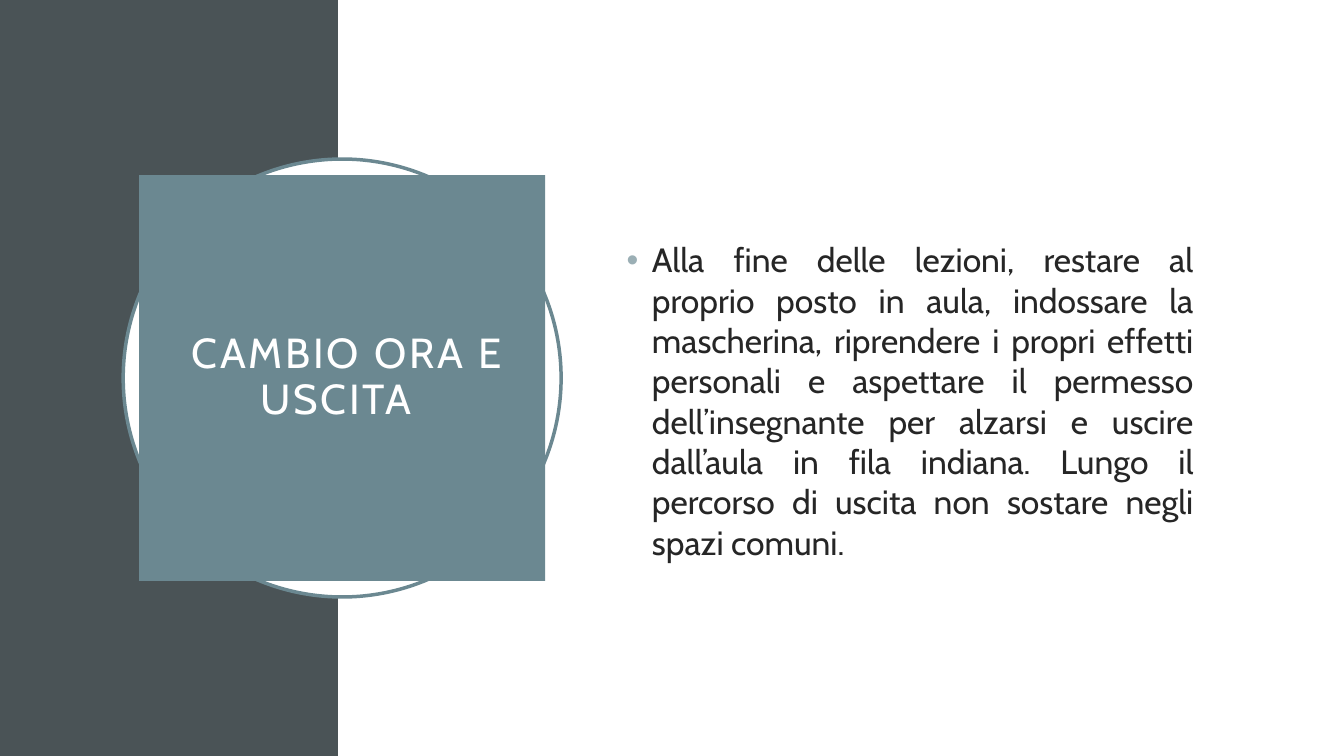
from lxml.etree import SubElement
from pptx import Presentation
from pptx.dml.color import RGBColor
from pptx.enum.shapes import MSO_SHAPE as Shape
from pptx.enum.text import MSO_ANCHOR as Anchor, MSO_AUTO_SIZE as AutoSize, PP_ALIGN as Align
from pptx.oxml.ns import qn
from pptx.util import Pt

COLOURS = {"slate": "4A5356", "white": "FFFFFF", "teal": "6B8891",
           "bullet": "9BAFB5", "ink": "262626"}
FONT = "Cabin"
TITLE = " CAMBIO ORA E USCITA "
BODY = ("Alla fine delle lezioni, restare al proprio posto in aula, indossare la "
        "mascherina, riprendere i propri effetti personali e aspettare il permesso "
        "dell’insegnante per alzarsi e uscire dall’aula in fila indiana. Lungo il "
        "percorso di uscita non sostare negli spazi comuni.")


def colour(name):
    """Return the palette colour of that name."""
    return RGBColor.from_string(COLOURS[name])


def paint(shape, fill):
    """Give a shape a solid fill."""
    shape.fill.solid()
    shape.fill.fore_color.rgb = colour(fill)


def add_figure(page, kind, left, top, width, height, fill, outline=None):
    """Add a flat preset shape with an optional outline."""
    figure = page.shapes.add_shape(kind, Pt(left), Pt(top), Pt(width), Pt(height))
    figure.shadow.inherit = False
    paint(figure, fill)
    if outline:
        figure.line.color.rgb = colour(outline)
        figure.line.width = Pt(2.5)
    else:
        figure.line.fill.background()


def write(box, text, size, ink, align):
    """Write one vertically centred paragraph and return it."""
    frame = box.text_frame
    frame.text = text
    frame.word_wrap = True
    frame.auto_size = AutoSize.NONE
    frame.vertical_anchor = Anchor.MIDDLE
    para = frame.paragraphs[0]
    para.alignment = align
    font = para.runs[0].font
    font.name, font.size = FONT, Pt(size)
    font.color.rgb = colour(ink)
    return para


def place_title(page, left, top, side):
    """Turn the title placeholder into a teal square in front of the circle."""
    title = page.shapes.title
    title.left, title.top = Pt(left), Pt(top)
    title.width = title.height = Pt(side)
    paint(title, "teal")
    para = write(title, TITLE, 30, "white", Align.CENTER)
    para.line_spacing = 0.9
    para.runs[0].font._element.set("spc", "200")
    frame = title.text_frame
    frame.margin_left = frame.margin_right = Pt(14.4)
    frame.margin_top = frame.margin_bottom = Pt(14.4)
    page.shapes._spTree.append(title._element)


def add_bullet_text(page, left, top, width, height):
    """Add the justified body text with its coloured bullet."""
    box = page.shapes.add_textbox(Pt(left), Pt(top), Pt(width), Pt(height))
    para = write(box, BODY, 24, "ink", Align.JUSTIFY)
    para.space_before = Pt(10)
    props = para._p.get_or_add_pPr()
    props.set("marL", str(Pt(18)))
    props.set("indent", str(-Pt(18)))
    bullet_colour = SubElement(props, qn("a:buClr"))
    SubElement(bullet_colour, qn("a:srgbClr")).set("val", COLOURS["bullet"])
    SubElement(props, qn("a:buFont")).set("typeface", "Arial")
    SubElement(props, qn("a:buChar")).set("char", "•")


def main():
    """Build the slide and save it."""
    deck = Presentation()
    deck.slide_width, deck.slide_height = Pt(960), Pt(540)
    page = deck.slides.add_slide(deck.slide_layouts[5])
    add_figure(page, Shape.RECTANGLE, 0, 0, 241.6, 540, "slate")
    add_figure(page, Shape.RECTANGLE, 241.6, 0, 718.4, 540, "white")
    add_figure(page, Shape.OVAL, 88, 113.6, 312.8, 312.8, "white", "teal")
    place_title(page, 99.4, 125, 290)
    add_bullet_text(page, 440.6, 110.2, 419, 352)
    deck.save("out.pptx")


if __name__ == "__main__":
    main()
